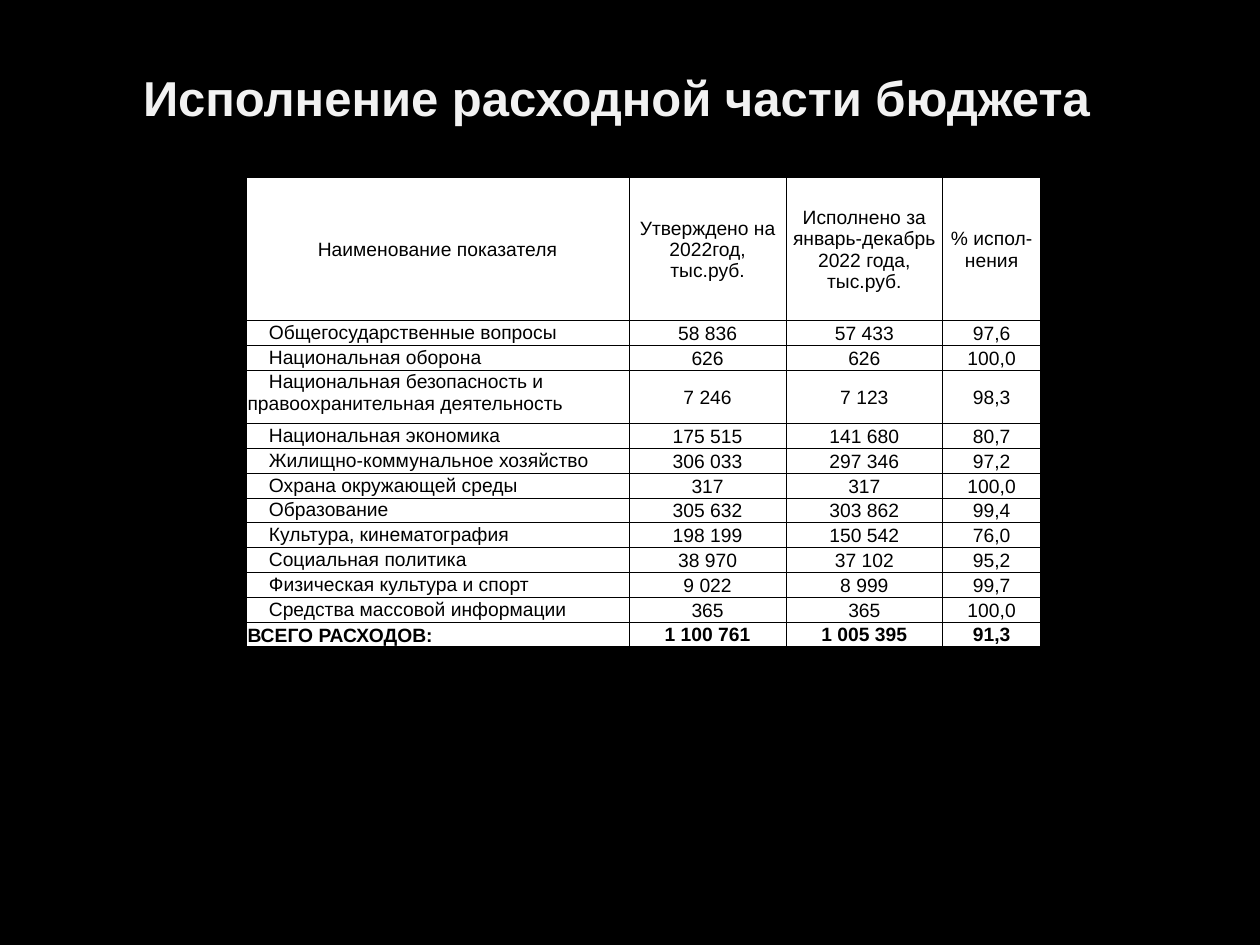
from pptx import Presentation
from pptx.dml.color import RGBColor
from pptx.enum.text import MSO_ANCHOR as Anchor, PP_ALIGN as Align
from pptx.oxml import parse_xml
from pptx.oxml.ns import nsdecls
from pptx.util import Cm, Pt

TITLE = "Исполнение расходной части бюджета"
HEADER = ("Наименование показателя", "Утверждено на 2022год, тыс.руб.",
          "Исполнено за январь-декабрь 2022 года, тыс.руб.", "% испол-нения")
EXPENSES = [
    ("Общегосударственные вопросы", "58 836", "57 433", "97,6"),
    ("Национальная оборона", "626", "626", "100,0"),
    ("Национальная безопасность и правоохранительная деятельность",
     "7 246", "7 123", "98,3"),
    ("Национальная экономика", "175 515", "141 680", "80,7"),
    ("Жилищно-коммунальное хозяйство", "306 033", "297 346", "97,2"),
    ("Охрана окружающей среды", "317", "317", "100,0"),
    ("Образование", "305 632", "303 862", "99,4"),
    ("Культура, кинематография", "198 199", "150 542", "76,0"),
    ("Социальная политика", "38 970", "37 102", "95,2"),
    ("Физическая культура и спорт", "9 022", "8 999", "99,7"),
    ("Средства массовой информации", "365", "365", "100,0"),
]
TOTAL = ("ВСЕГО РАСХОДОВ:", "1 100 761", "1 005 395", "91,3")
ROWS = [HEADER, *EXPENSES, TOTAL]
LAST = len(ROWS) - 1

COLUMN_WIDTHS = (7.72, 3.17, 3.15, 1.98)
ROW_HEIGHT = 0.5
SPECIAL_HEIGHTS = {0: 2.88, 3: 1.08, LAST - 1: 0.45}
BLACK, WHITE, LIGHT = "000000", "FFFFFF", "F2F2F2"


def color(value):
    return RGBColor.from_string(value)


def style(paragraph, size, value, bold, align):
    font = paragraph.font
    font.name, font.size, font.bold = "Arial", Pt(size), bold
    font.color.rgb = color(value)
    paragraph.alignment = align


def add_borders(cell):
    properties = cell._tc.get_or_add_tcPr()
    for index, side in enumerate("LRTB"):
        properties.insert(index, parse_xml(
            f'<a:ln{side} {nsdecls("a")} w="{Pt(0.5)}"><a:solidFill>'
            f'<a:srgbClr val="{BLACK}"/></a:solidFill></a:ln{side}>'))


def fill_cell(cell, text, row, column):
    cell.fill.solid()
    cell.fill.fore_color.rgb = color(WHITE)
    add_borders(cell)
    cell.margin_left = cell.margin_right = cell.margin_top = Cm(0.03)
    cell.margin_bottom = 0
    cell.text = text
    paragraph = cell.text_frame.paragraphs[0]
    is_name = column == 0 and row > 0
    style(paragraph, 11, BLACK, row == LAST, Align.LEFT if is_name else Align.CENTER)
    cell.vertical_anchor = Anchor.MIDDLE
    if is_name:
        cell.vertical_anchor = Anchor.BOTTOM if row == LAST else Anchor.TOP
        if row < LAST:  # first-line indent of expense names
            paragraph._p.get_or_add_pPr().set("indent", str(Cm(0.43)))


presentation = Presentation()
presentation.slide_width, presentation.slide_height = Cm(25.4), Cm(19.05)
slide = presentation.slides.add_slide(presentation.slide_layouts[6])
slide.background.fill.solid()
slide.background.fill.fore_color.rgb = color(BLACK)

# Title
title = slide.shapes.add_textbox(Cm(1.27), Cm(0.74), Cm(22.86), Cm(2.44))
frame = title.text_frame
frame.word_wrap = True
frame.vertical_anchor = Anchor.MIDDLE
frame.margin_right = Cm(0.8)
frame.text = TITLE
style(frame.paragraphs[0], 28, LIGHT, True, Align.CENTER)

# Expense table
heights = [SPECIAL_HEIGHTS.get(row, ROW_HEIGHT) for row in range(len(ROWS))]
table = slide.shapes.add_table(
    len(ROWS), len(HEADER), Cm(4.96), Cm(3.58),
    Cm(sum(COLUMN_WIDTHS)), Cm(sum(heights))).table
table.first_row = table.horz_banding = False
for table_column, width in zip(table.columns, COLUMN_WIDTHS):
    table_column.width = Cm(width)
for row, (values, height) in enumerate(zip(ROWS, heights)):
    table.rows[row].height = Cm(height)
    for column, text in enumerate(values):
        fill_cell(table.cell(row, column), text, row, column)

presentation.save("out.pptx")
